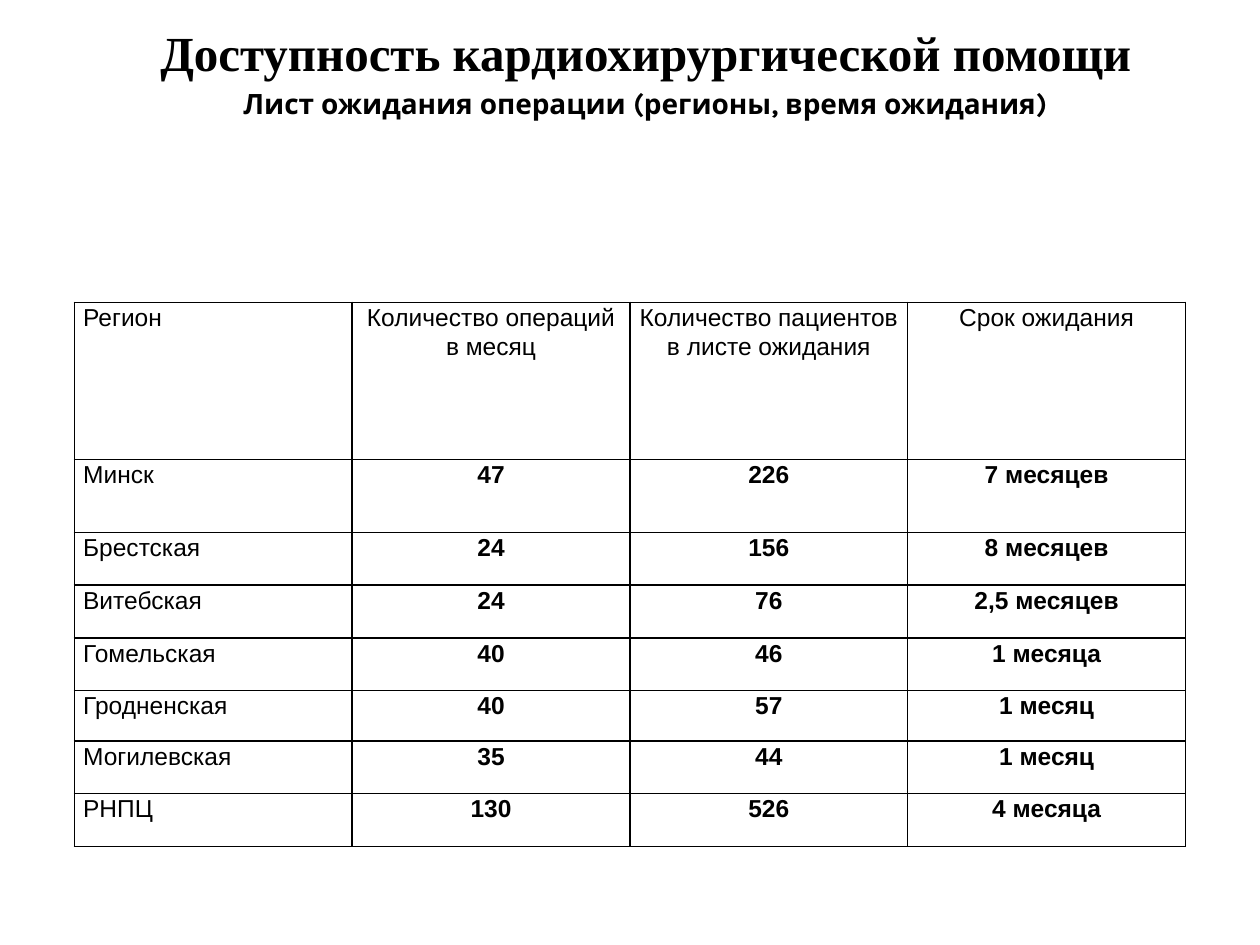
from lxml import etree
from pptx import Presentation
from pptx import util as u
from pptx.dml.color import RGBColor
from pptx.enum import text
from pptx.oxml.ns import qn

BLACK = RGBColor(0, 0, 0)
WIDE, HIGH = u.Inches(10), u.Inches(7.5)

HEADS = [
    ("Доступность кардиохирургической помощи", "Times New Roman", 28),
    ("Лист ожидания операции (регионы, время ожидания)", "Karla", 16),
]
ROWS = [
    ("Регион", "Количество операций в месяц",
     "Количество пациентов в листе ожидания", "Срок ожидания"),
    ("Минск", "47", "226", "7 месяцев"),
    ("Брестская", "24", "156", "8 месяцев"),
    ("Витебская", "24", "76", "2,5 месяцев"),
    ("Гомельская", "40", "46", "1 месяца"),
    ("Гродненская", "40", "57", "1 месяц"),
    ("Могилевская", "35", "44", "1 месяц"),
    ("РНПЦ", "130", "526", "4 месяца"),
]
# Row heights as shares of the table's height
TALL = [1.25, 0.58, 0.42, 0.42, 0.42, 0.4, 0.42, 0.42]


def share(x, y, w, h):
    """Turn shares of the slide's size into a box."""
    return [int(v) for v in (x * WIDE, y * HIGH, w * WIDE, h * HIGH)]


def add_run(para, words, face, size, bold):
    run = para.add_run()
    run.text = words
    run.font.name, run.font.size = face, u.Pt(size)
    run.font.bold = bold
    run.font.color.rgb = BLACK


def add_title(slide, box):
    frame = slide.shapes.add_textbox(*box).text_frame
    frame.word_wrap = True
    for i, (words, face, size) in enumerate(HEADS):
        para = frame.add_paragraph() if i else frame.paragraphs[0]
        para.alignment = text.PP_ALIGN.CENTER
        # Hanging indent
        props = para._p.get_or_add_pPr()
        props.set("marL", str(u.Inches(0.38)))
        props.set("indent", str(-u.Inches(0.38)))
        if i:
            para.space_before = u.Pt(size * 0.2)
        add_run(para, words, face, size, True)


def add_edges(cell):
    props = cell._tc.get_or_add_tcPr()
    for i, side in enumerate(("lnL", "lnR", "lnT", "lnB")):
        line = etree.Element(qn("a:" + side), w=str(u.Pt(1)))
        fill = etree.SubElement(line, qn("a:solidFill"))
        etree.SubElement(fill, qn("a:srgbClr"), val=str(BLACK))
        props.insert(i, line)


def fill_cell(cell, words, center, bold):
    cell.fill.background()
    cell.margin_left = cell.margin_right = u.Inches(0.07)
    cell.margin_top = cell.margin_bottom = 0
    para = cell.text_frame.paragraphs[0]
    para.alignment = text.PP_ALIGN.CENTER if center else text.PP_ALIGN.LEFT
    para.line_spacing = 1.07
    para.space_after = u.Pt(8)
    add_run(para, words, "Arial", 14, bold)
    add_edges(cell)


def add_grid(slide, box):
    table = slide.shapes.add_table(len(ROWS), len(ROWS[0]), *box).table
    table.first_row = table.horz_banding = False
    for col in table.columns:
        col.width = box[2] // len(ROWS[0])
    for r, (row, tall) in enumerate(zip(ROWS, TALL)):
        table.rows[r].height = int(box[3] * tall / sum(TALL))
        for c, words in enumerate(row):
            fill_cell(table.cell(r, c), words, c > 0, r > 0 and c > 0)


def main():
    deck = Presentation()
    deck.slide_width, deck.slide_height = WIDE, HIGH
    slide = deck.slides.add_slide(deck.slide_layouts[6])
    # Heading, then waiting list
    add_title(slide, share(0.091, 0.017, 0.843, 0.116))
    add_grid(slide, share(0.059, 0.32, 0.882, 0.576))
    deck.save("out.pptx")


if __name__ == "__main__":
    main()
